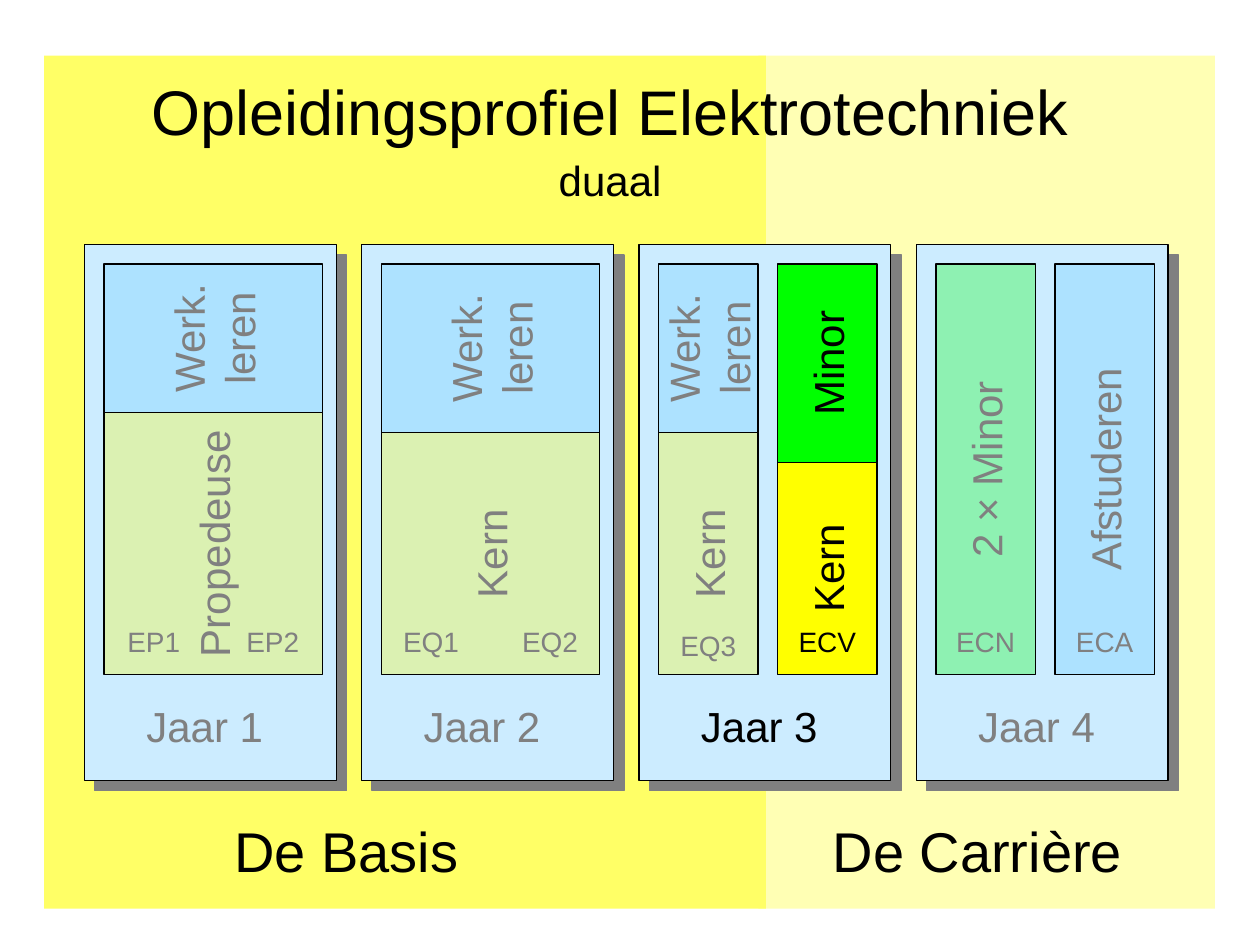
from lxml import etree
from pptx import Presentation
from pptx.dml.color import RGBColor
from pptx.enum.shapes import MSO_SHAPE as Shape
from pptx.enum.text import MSO_ANCHOR as Anchor, MSO_AUTO_SIZE as AutoSize, PP_ALIGN as Align
from pptx.oxml.ns import qn
from pptx.util import Cm, Pt

COLORS = {
    "basis": "FFFF66", "carriere": "FFFFB4", "card": "CCECFF", "shadow": "808080",
    "work": "66CCFF", "core": "FFFF00", "minor": "00FF00",
    "active": "000000", "muted": "808080", "line": "000000",
}
FONT = "Arial"

# Year cards and the block grid inside them, in cm
CARD_LEFT, CARD_TOP, CARD_WIDTH, CARD_HEIGHT, CARD_STEP = 1.7, 4.93, 5.08, 10.8, 5.59
BLOCK_INSET, BLOCK_TOP, BLOCK_BOTTOM = 0.4, 5.32, 13.6
COLUMN_WIDTH, COLUMN_STEP = 2.0, 2.4
FULL_WIDTH = COLUMN_STEP + COLUMN_WIDTH


class ProfileSlide:
    def __init__(self, prs):
        self.slide = prs.slides.add_slide(prs.slide_layouts[5])
        self.shapes = self.slide.shapes

    def color(self, name):
        return RGBColor.from_string(COLORS[name])

    def set_text(self, shape, text, size, color="active", align=Align.CENTER,
                 wrap=False, grow=False, anchor=Anchor.MIDDLE):
        frame = shape.text_frame
        frame.text = text
        frame.word_wrap = wrap
        frame.auto_size = AutoSize.SHAPE_TO_FIT_TEXT if grow else AutoSize.NONE
        frame.vertical_anchor = anchor
        for paragraph in frame.paragraphs:
            paragraph.alignment = align
            for run in paragraph.runs:
                run.font.name = FONT
                run.font.size = Pt(size)
                run.font.color.rgb = self.color(color)

    def title(self, text, left, top, width, height, size):
        title = self.shapes.title
        title.left, title.top, title.width, title.height = map(Cm, (left, top, width, height))
        self.set_text(title, text, size, wrap=True)
        # Bring the title in front of the background panels
        title.element.getparent().append(title.element)

    def label(self, text, left, top, width, height, size, **style):
        box = self.shapes.add_textbox(Cm(left), Cm(top), Cm(width), Cm(height))
        self.set_text(box, text, size, **style)

    def rect(self, left, top, width, height, fill, outlined=True, opacity=100):
        rect = self.shapes.add_shape(Shape.RECTANGLE, Cm(left), Cm(top), Cm(width), Cm(height))
        rect.shadow.inherit = False
        rect.fill.solid()
        rect.fill.fore_color.rgb = self.color(fill)
        if opacity < 100:
            srgb = rect.element.spPr.find(".//" + qn("a:srgbClr"))
            etree.SubElement(srgb, qn("a:alpha"), val=str(opacity * 1000))
        if outlined:
            rect.line.color.rgb = self.color("line")
            rect.line.width = Pt(0.75)
        else:
            rect.line.fill.background()
        return rect

    def card(self, left, year, color):
        card = self.rect(left, CARD_TOP, CARD_WIDTH, CARD_HEIGHT, "card")
        effects = card.element.spPr.find(qn("a:effectLst"))
        shadow = etree.SubElement(effects, qn("a:outerShdw"), blurRad="0",
                                  dist=str(Pt(8.5)), dir="2700000", algn="ctr", rotWithShape="0")
        etree.SubElement(shadow, qn("a:srgbClr"), val=COLORS["shadow"])
        self.label(year, left + 1, 14, 2.87, 1.27, 24, color=color, align=Align.LEFT,
                   grow=True, anchor=Anchor.TOP)

    def block(self, text, left, top, width, height, fill, active):
        """Block with text turned a quarter to the left; the arguments give its place as seen."""
        opacity, color = (100, "active") if active else (30, "muted")
        if "\n" in text:
            block = self.rect(left, top, width, height, fill, opacity=opacity)
            block.element.find(".//" + qn("a:bodyPr")).set("vert", "vert270")
        else:
            shift = (width - height) / 2
            block = self.rect(left + shift, top - shift, height, width, fill, opacity=opacity)
            block.rotation = 270
        self.set_text(block, text, 24, color)


def main():
    prs = Presentation()
    prs.slide_width, prs.slide_height = Cm(25.4), Cm(19.05)
    profile = ProfileSlide(prs)

    # Background panels
    profile.rect(15.29, 1.12, 9.2, 17.2, "carriere", outlined=False)
    profile.rect(0.89, 1.12, 14.55, 17.2, "basis", outlined=False)

    # Year cards
    for year in range(1, 5):
        profile.card(CARD_LEFT + (year - 1) * CARD_STEP, f"Jaar {year}",
                     "active" if year == 3 else "muted")

    # Headings
    profile.title("Opleidingsprofiel Elektrotechniek", 1.5, 1.52, 21.6, 1.42, 36)
    profile.label("duaal", 1.5, 2.92, 21.6, 1.42, 24, wrap=True)
    for phase, left in (("De Basis", 3.1), ("De Carrière", 15.82)):
        profile.label(phase, left, 16.33, 7.77, 1.6, 32, wrap=True, grow=True, anchor=Anchor.TOP)

    # Stacks of blocks: year, column, width, active, (text, fill, height or None for the rest)
    work = "Werk.\nleren"
    stacks = [
        (1, 0, FULL_WIDTH, False, [(work, "work", 3), ("Propedeuse", "core", None)]),
        (2, 0, FULL_WIDTH, False, [(work, "work", 3.4), ("Kern", "core", None)]),
        (3, 0, COLUMN_WIDTH, False, [(work, "work", 3.4), ("Kern", "core", None)]),
        (3, 1, COLUMN_WIDTH, True, [("Minor", "minor", 4), ("Kern", "core", None)]),
        (4, 0, COLUMN_WIDTH, False, [("2 × Minor", "minor", None)]),
        (4, 1, COLUMN_WIDTH, False, [("Afstuderen", "work", None)]),
    ]

    def column_left(year, column):
        return CARD_LEFT + (year - 1) * CARD_STEP + BLOCK_INSET + column * COLUMN_STEP

    for year, column, width, active, blocks in stacks:
        top = BLOCK_TOP
        for text, fill, height in blocks:
            height = height or BLOCK_BOTTOM - top
            profile.block(text, column_left(year, column), top, width, height, fill, active)
            top += height

    # Course codes, one per column
    codes = [("EP1", "EP2"), ("EQ1", "EQ2"), ("EQ3", "ECV"), ("ECN", "ECA")]
    for year, pair in enumerate(codes, start=1):
        for column, code in enumerate(pair):
            profile.label(code, column_left(year, column), 12.4 if code == "EQ3" else 12.32,
                          COLUMN_WIDTH, 1.2, 16, color="active" if code == "ECV" else "muted")

    prs.save("out.pptx")


if __name__ == "__main__":
    main()
